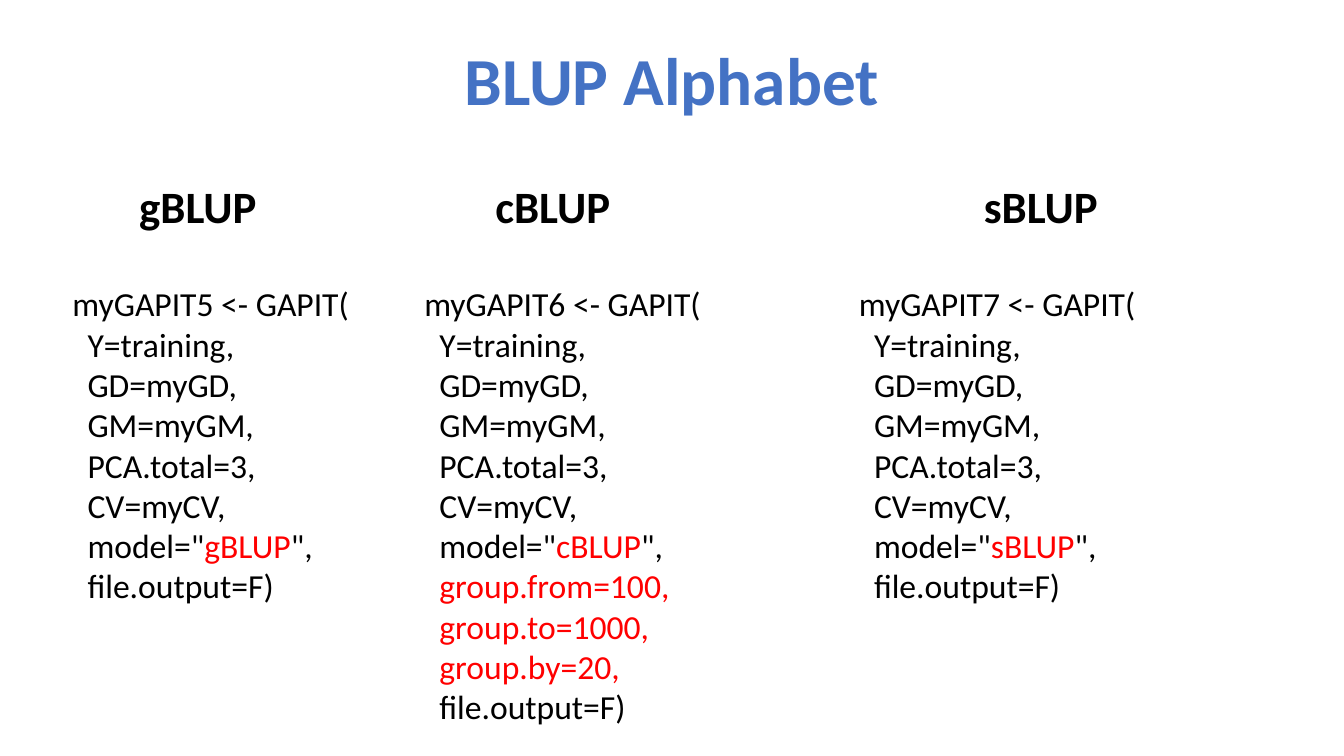
import pptx
import pptx.dml.color
import pptx.enum.shapes
import pptx.enum.text
import pptx.util

PX = 9144  # 100 px to the inch
BLUE = pptx.dml.color.RGBColor(0x44, 0x72, 0xC4)
BLACK = pptx.dml.color.RGBColor(0, 0, 0)
RED = pptx.dml.color.RGBColor(0xFF, 0, 0)
WHITE = pptx.dml.color.RGBColor(0xFF, 0xFF, 0xFF)

ANCHOR = pptx.enum.text.MSO_ANCHOR
CENTER = pptx.enum.text.PP_ALIGN.CENTER
TITLE = {"size": pptx.util.Pt(48), "bold": True, "name": "Calibri"}
HEADING = {"size": pptx.util.Pt(32), "bold": True, "name": "Calibri"}
CODE = {"size": pptx.util.Pt(24), "name": "Calibri"}

LINE = 40  # height of a line of code
INDENT = 15
COMMON = ["Y=training,", "GD=myGD,", "GM=myGM,", "PCA.total=3,", "CV=myCV,"]
GROUPS = ["group.from=100,", "group.to=1000,", "group.by=20,"]

# model, call number, code left and width, heading left, extra arguments
MODELS = [
    ("gBLUP", 5, 62, 307, 104, []),
    ("cBLUP", 6, 411, 390, 456, GROUPS),
    ("sBLUP", 7, 842, 409, 940, []),
]


def emu(*lengths):
    return [pptx.util.Emu(n * PX) for n in lengths]


def add_run(p, text, fmt, color):
    r = p.add_run()
    r.text = text
    for key, value in fmt.items():
        setattr(r.font, key, value)
    r.font.color.rgb = color


def add_title(s, text, box):
    sp = s.shapes.title
    sp.left, sp.top, sp.width, sp.height = emu(*box)
    tf = sp.text_frame
    tf.auto_size = pptx.enum.text.MSO_AUTO_SIZE.NONE
    tf.vertical_anchor = ANCHOR.TOP
    p = tf.paragraphs[0]
    p.alignment = CENTER
    add_run(p, text, TITLE, BLUE)


def add_code(s, model, number, extra, box):
    tf = s.shapes.add_textbox(*emu(*box)).text_frame
    tf.word_wrap = True
    lines = [[(f"myGAPIT{number} <- GAPIT(", BLACK)]]
    lines += [[(text, BLACK)] for text in COMMON]
    lines.append([('model="', BLACK), (model, RED), ('",', BLACK)])
    lines += [[(text, RED)] for text in extra]
    lines.append([("file.output=F)", BLACK)])
    for i, line in enumerate(lines):
        p = tf.add_paragraph() if i else tf.paragraphs[0]
        if i:  # arguments are indented under the call
            p._p.get_or_add_pPr().set("marL", str(INDENT * PX))
        for text, color in line:
            add_run(p, text, CODE, color)


def add_heading(s, text, box):
    kind = pptx.enum.shapes.MSO_SHAPE.SNIP_ROUND_RECTANGLE
    sp = s.shapes.add_shape(kind, *emu(*box))
    sp.shadow.inherit = False
    sp.fill.solid()
    sp.fill.fore_color.rgb = WHITE
    sp.line.fill.background()
    tf = sp.text_frame
    tf.word_wrap = True
    tf.vertical_anchor = ANCHOR.MIDDLE
    p = tf.paragraphs[0]
    p.alignment = CENTER
    add_run(p, text, HEADING, BLACK)


def add_model(s, model, number, left, width, heading_left, extra, top):
    height = LINE * (len(COMMON) + len(extra) + 3) + 10
    add_code(s, model, number, extra, (left, top + 107, width, height))
    add_heading(s, model, (heading_left, top, 187, 67))


def main():
    prs = pptx.Presentation()
    prs.slide_width, prs.slide_height = emu(1333, 750)
    s = prs.slides.add_slide(prs.slide_layouts[5])

    # Title
    add_title(s, "BLUP Alphabet", (53, 33, 1227, 91))

    # One column per model
    for model in MODELS:
        add_model(s, *model, top=169)

    prs.save("out.pptx")


if __name__ == "__main__":
    main()
